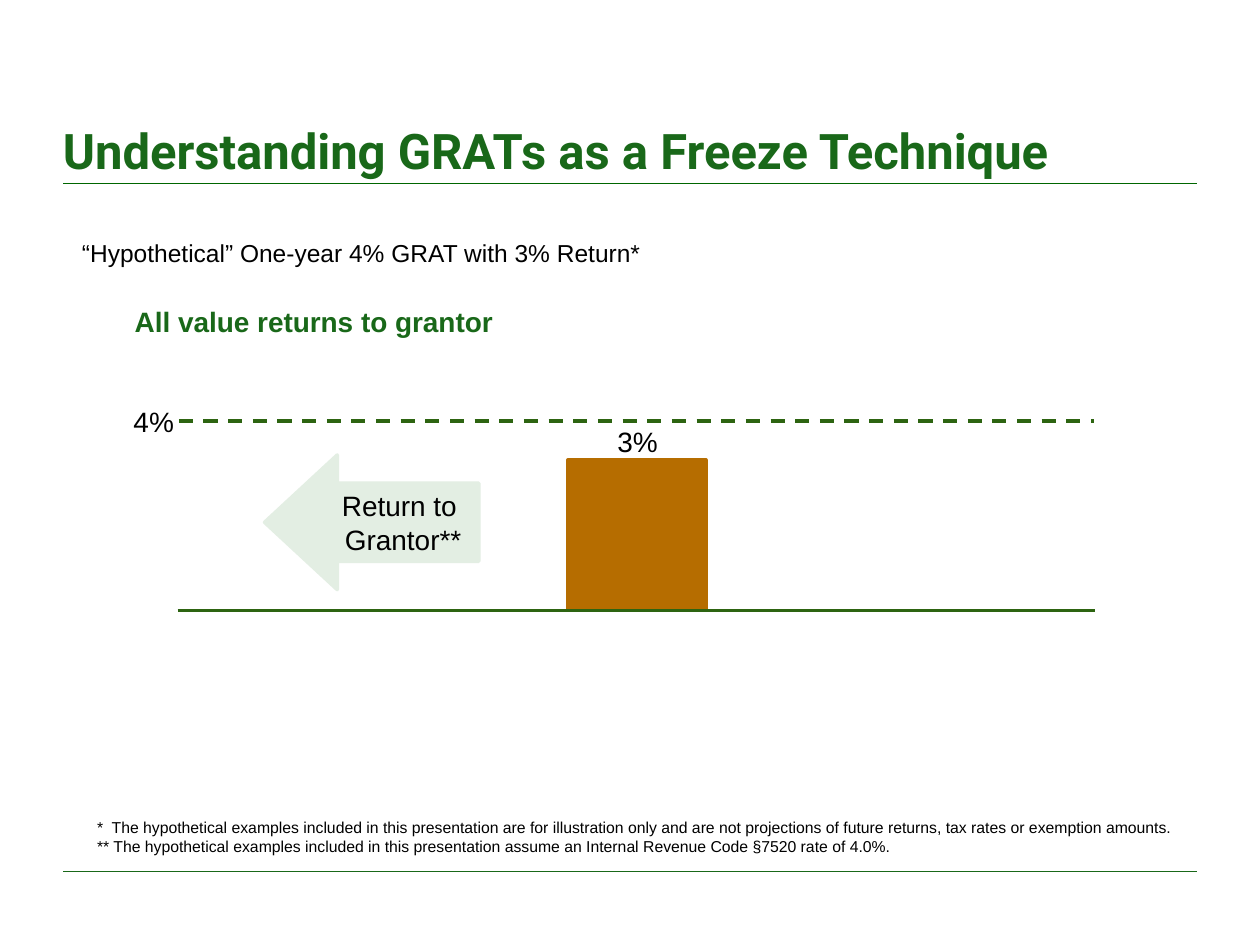
"""Build the slide on GRATs as a freeze technique."""
from lxml import etree
from pptx import Presentation, util as u
from pptx.dml.color import RGBColor
from pptx.enum import dml, shapes, text
from pptx.oxml.ns import qn

COLORS = {"green": "196819", "rule": "006600", "axis": "2D6411",
          "bar": "B66D00", "arrow": "E3EEE3", "black": "000000"}
INSET = (6.5, 2.9)
BOTTOM = text.MSO_ANCHOR.BOTTOM
CENTER = text.PP_ALIGN.CENTER

RULES = [
    dict(x=36, y=105.1, w=648, color="rule", weight=0.5),
    dict(x=36, y=498.2, w=648, color="green", weight=0.5),
]
AXES = [
    dict(x=101.5, y=349, w=524.2, color="axis", weight=2),
    dict(x=102.2, y=240.5, w=522.7, color="axis", weight=2, dashed=True),
]
BLOCKS = [
    (shapes.MSO_SHAPE.RECTANGLE, (324.7, 262.8, 78.5, 85.7), "bar", 2.25, ()),
    (shapes.MSO_SHAPE.LEFT_ARROW, (151.2, 260, 122.4, 77), "arrow", 2, (0.58, 0.54)),
]
TEXTS = [
    (["Understanding GRATs as a Freeze Technique"], (36, 63.4, 648, 38.9),
     dict(size=28, font="Roboto", color="green", bold=True, anchor=BOTTOM)),
    (["“Hypothetical” One-year 4% GRAT with 3% Return*"], (46.8, 113.8, 622.8, 38.9),
     dict(size=14, anchor=BOTTOM)),
    (["All value returns to grantor"], (77, 172.1, 596.9, 38.9),
     dict(color="green", bold=True, spacing=1.1)),
    (["3%"], (346.3, 239.8, 49.7, 25.9), dict(inset=INSET)),
    (["4%"], (69.8, 228.2, 49.7, 25.9), dict(inset=INSET)),
    (["Return to \vGrantor**"], (182.9, 276.5, 95, 45.4),
     dict(inset=INSET, align=CENTER)),
    (["*  The hypothetical examples included in this presentation are for illustration "
      "only and are not projections of future returns, tax rates or exemption amounts.",
      "** The hypothetical examples included in this presentation assume an Internal "
      "Revenue Code §7520 rate of 4.0%."], (49, 464.4, 631.4, 39.6),
     dict(size=9, inset=INSET, wrap=False)),
]


def rgb(name):
    return RGBColor.from_string(COLORS[name])


def add_text(s, paragraphs, box, size=16, font="Arial", color="black", bold=False,
             anchor=text.MSO_ANCHOR.TOP, align=text.PP_ALIGN.LEFT, inset=(0, 0),
             spacing=None, wrap=True):
    tf = s.shapes.add_textbox(*map(u.Pt, box)).text_frame
    tf.word_wrap = wrap
    tf.vertical_anchor = anchor
    tf.margin_left = tf.margin_right = u.Pt(inset[0])
    tf.margin_top = tf.margin_bottom = u.Pt(inset[1])
    for i, content in enumerate(paragraphs):
        p = tf.add_paragraph() if i else tf.paragraphs[0]
        p.text = content
        p.alignment = align
        p.line_spacing = spacing
        for r in p.runs:
            r.font.name, r.font.size, r.font.bold = font, u.Pt(size), bold
            r.font.color.rgb = rgb(color)


def add_line(s, x, y, w, color, weight, dashed=False):
    c = s.shapes.add_connector(shapes.MSO_CONNECTOR.STRAIGHT,
                               u.Pt(x), u.Pt(y), u.Pt(x + w), u.Pt(y))
    c.line.color.rgb = rgb(color)
    c.line.width = u.Pt(weight)
    if dashed:
        c.line.dash_style = dml.MSO_LINE.DASH
    etree.SubElement(c._element.spPr, qn("a:effectLst"))


def add_block(s, kind, box, color, weight, adjustments):
    sp = s.shapes.add_shape(kind, *map(u.Pt, box))
    for i, value in enumerate(adjustments):
        sp.adjustments[i] = value
    sp.shadow.inherit = False
    sp.fill.solid()
    sp.fill.fore_color.rgb = sp.line.color.rgb = rgb(color)
    sp.line.width = u.Pt(weight)


def main():
    prs = Presentation()
    prs.slide_width, prs.slide_height = u.Pt(720), u.Pt(540)
    s = prs.slides.add_slide(prs.slide_layouts[6])
    for block in BLOCKS:
        add_block(s, *block)
    for line in RULES + AXES:
        add_line(s, **line)
    for paragraphs, box, style in TEXTS:
        add_text(s, paragraphs, box, **style)
    prs.save("out.pptx")


if __name__ == "__main__":
    main()
